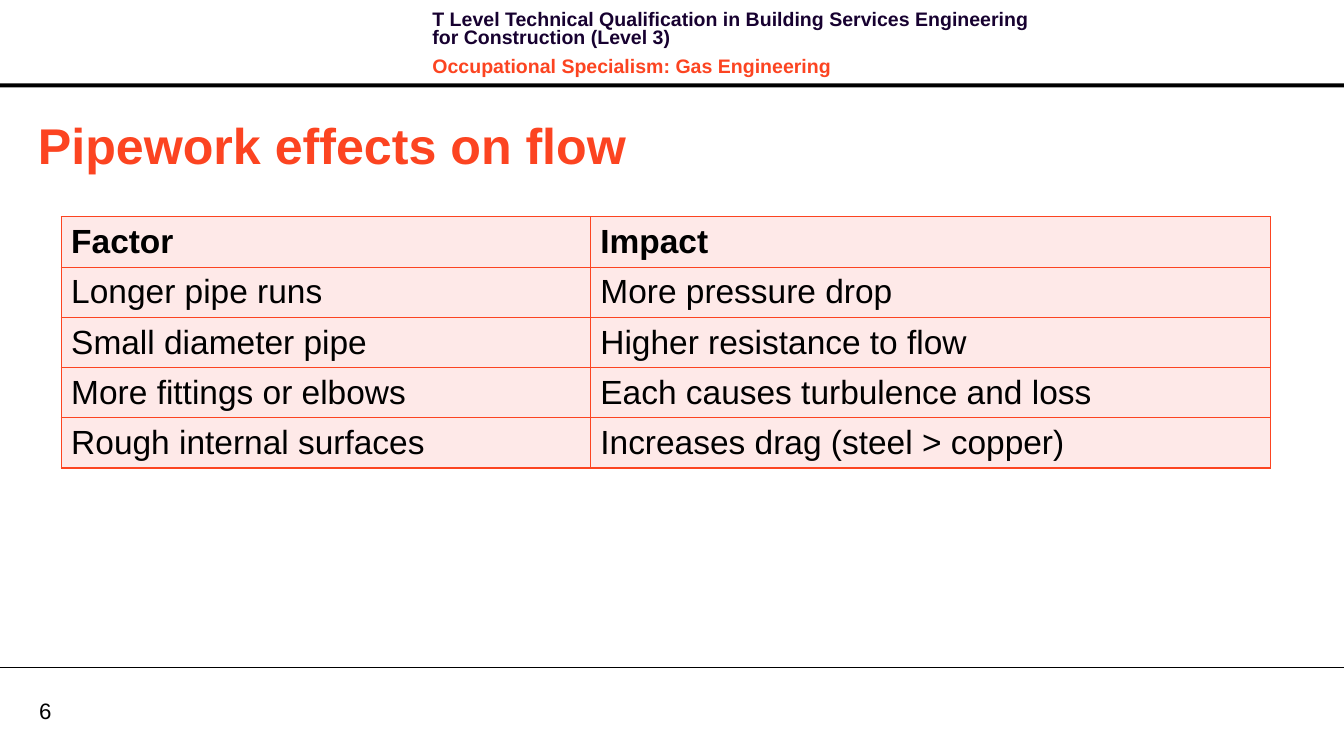
from dataclasses import dataclass

from lxml import etree
from pptx import Presentation, util as u
from pptx.dml.color import RGBColor
from pptx.enum import shapes, text
from pptx.oxml import ns


@dataclass(frozen=True)
class Theme:
    font: str = "Arial"
    black: str = "000000"
    navy: str = "170130"
    orange: str = "FC4421"
    blush: str = "FEE9E8"
    header_size: float = 14
    title_size: float = 36
    table_size: float = 24
    number_size: float = 16


THEME = Theme()
WIDTH, HEIGHT = 964.08, 538.56

QUALIFICATION = ("T Level Technical Qualification in Building Services "
                 "Engineering for Construction (Level 3)")
SPECIALISM = "Occupational Specialism: Gas Engineering"
FACTORS = [
    ("Factor", "Impact"),
    ("Longer pipe runs", "More pressure drop"),
    ("Small diameter pipe", "Higher resistance to flow"),
    ("More fittings or elbows", "Each causes turbulence and loss"),
    ("Rough internal surfaces", "Increases drag (steel > copper)"),
]


def write(paragraph, words, *, size, color=THEME.black, bold=False,
          leading=None, before=0, after=0):
    """Put formatted words into a paragraph."""
    if leading:
        paragraph.line_spacing = u.Pt(leading)
    paragraph.space_before = u.Pt(before)
    paragraph.space_after = u.Pt(after)
    run = paragraph.add_run()
    run.text = words
    run.font.name = THEME.font
    run.font.size = u.Pt(size)
    run.font.bold = bold
    run.font.color.rgb = RGBColor.from_string(color)


def add_frame(slide, box, insets=(7.2, 3.6), anchor=text.MSO_ANCHOR.TOP):
    """Add an empty wrapping text box and return its text frame."""
    frame = slide.shapes.add_textbox(*map(u.Pt, box)).text_frame
    frame.word_wrap = True
    frame.vertical_anchor = anchor
    frame.margin_left = frame.margin_right = u.Pt(insets[0])
    frame.margin_top = frame.margin_bottom = u.Pt(insets[1])
    return frame


def add_header(slide, box):
    """Course names above a heavy full-width rule."""
    left, top, width, height = box
    rule_height = 2.88
    rule = slide.shapes.add_shape(
        shapes.MSO_SHAPE.RECTANGLE, u.Pt(left),
        u.Pt(top + height - rule_height), u.Pt(width), u.Pt(rule_height))
    rule.shadow.inherit = False
    rule.fill.solid()
    rule.fill.fore_color.rgb = RGBColor.from_string(THEME.black)
    rule.line.fill.background()

    names = add_frame(slide, (left + 303.12, top + 5.04, 458.64, 46.08))
    style = dict(size=THEME.header_size, bold=True, leading=13.1, after=4)
    write(names.paragraphs[0], QUALIFICATION, color=THEME.navy, **style)
    write(names.add_paragraph(), SPECIALISM, color=THEME.orange, before=4,
          **style)


def add_title(slide, box):
    title = add_frame(slide, box, anchor=text.MSO_ANCHOR.MIDDLE)
    write(title.paragraphs[0], "Pipework effects on flow",
          size=THEME.title_size, color=THEME.orange, bold=True)


def outline_cell(cell, color):
    """Draw a 1 pt border on all four sides, ahead of the cell fill."""
    properties = cell._tc.get_or_add_tcPr()
    for position, side in enumerate(("lnL", "lnR", "lnT", "lnB")):
        border = etree.Element(ns.qn(f"a:{side}"), w=str(u.Pt(1)))
        fill = etree.SubElement(border, ns.qn("a:solidFill"))
        etree.SubElement(fill, ns.qn("a:srgbClr"), val=color)
        properties.insert(position, border)


def add_factor_table(slide, box, first_share):
    """Factors and impacts in equal rows; first_share sets column one."""
    left, top, width, height = box
    table = slide.shapes.add_table(
        len(FACTORS), 2, *map(u.Pt, box)).table
    table.horz_banding = False
    table.columns[0].width = u.Pt(width * first_share)
    table.columns[1].width = u.Pt(width * (1 - first_share))
    for row_index, row_words in enumerate(FACTORS):
        table.rows[row_index].height = u.Pt(height / len(FACTORS))
        for column_index, words in enumerate(row_words):
            cell = table.cell(row_index, column_index)
            cell.vertical_anchor = text.MSO_ANCHOR.MIDDLE
            cell.fill.solid()
            cell.fill.fore_color.rgb = RGBColor.from_string(THEME.blush)
            outline_cell(cell, THEME.orange)
            write(cell.text_frame.paragraphs[0], words,
                  size=THEME.table_size, bold=row_index == 0)


def add_footer(slide, box):
    """Thin rule with the slide number below it."""
    left, top, width, height = box
    rule = slide.shapes.add_connector(
        shapes.MSO_CONNECTOR.STRAIGHT, u.Pt(left), u.Pt(top),
        u.Pt(left + width), u.Pt(top))
    rule.line.width = u.Pt(0.75)
    rule.line.color.rgb = RGBColor.from_string(THEME.black)
    etree.SubElement(rule._element.spPr, ns.qn("a:effectLst"))

    number = add_frame(slide, (left + 28.08, top + 20.88, 46.08, 19.44),
                       insets=(0, 0), anchor=text.MSO_ANCHOR.MIDDLE)
    write(number.paragraphs[0], "6", size=THEME.number_size)


def main():
    deck = Presentation()
    deck.slide_width, deck.slide_height = u.Pt(WIDTH), u.Pt(HEIGHT)
    slide = deck.slides.add_slide(deck.slide_layouts[6])
    add_header(slide, (0, 0, WIDTH, 62.64))
    add_footer(slide, (0, 478.8, WIDTH, HEIGHT - 478.8))
    add_title(slide, (20.16, 77.76, 915.84, 51.12))
    add_factor_table(slide, (43.92, 155.52, 867.6, 167.5), 0.4375)
    deck.save("out.pptx")


if __name__ == "__main__":
    main()
